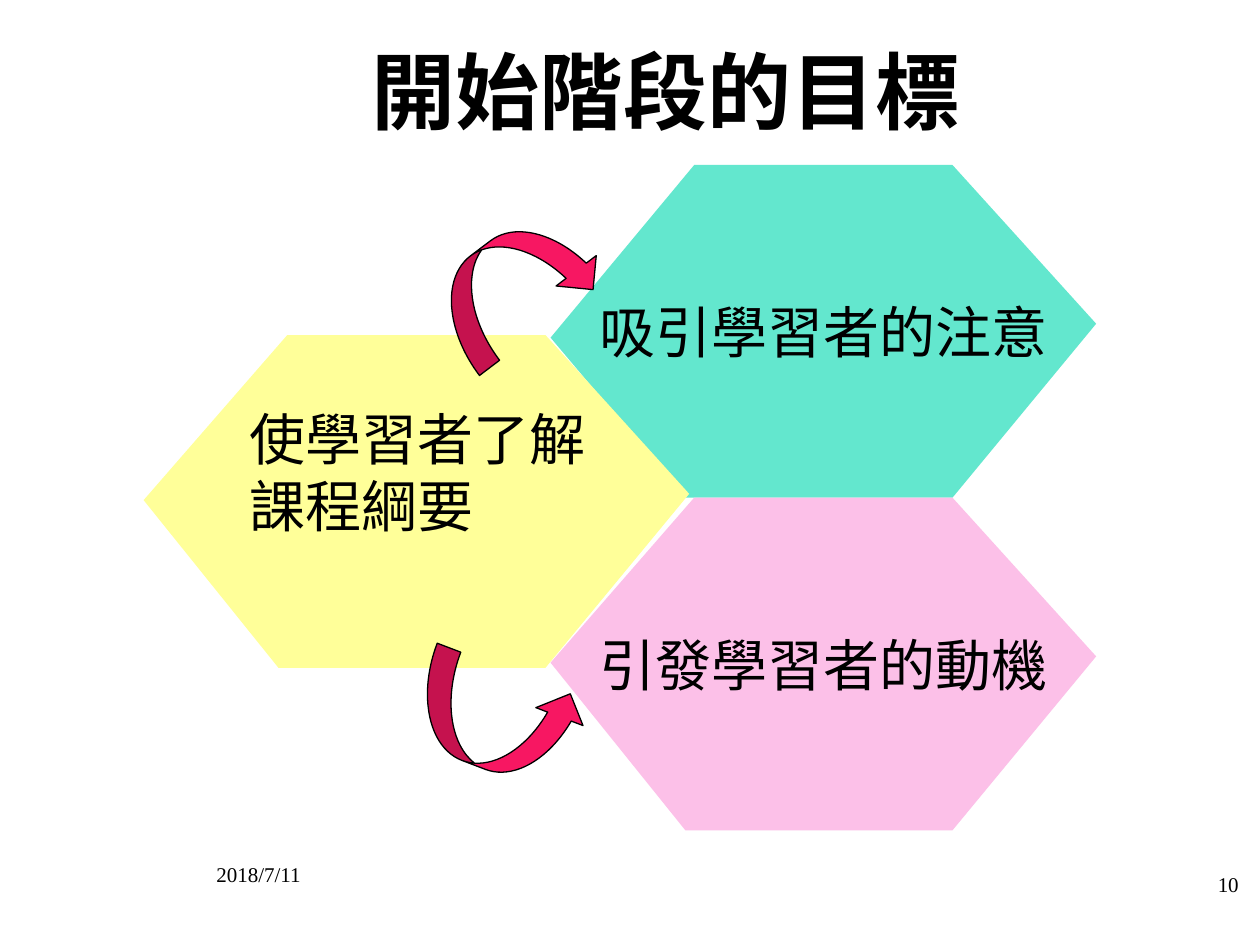
from typing import NamedTuple

from lxml.etree import SubElement
from pptx import Presentation
from pptx.dml.color import RGBColor
from pptx.enum.shapes import MSO_SHAPE
from pptx.enum.text import MSO_ANCHOR, PP_ALIGN
from pptx.oxml.ns import qn
from pptx.util import Inches, Pt

SANS = "Noto Sans CJK SC"
SERIF = "Times New Roman"
INK = "000000"


class Hex(NamedTuple):
    left: float
    top: float
    notch: float
    fill: str
    text: str
    inset: float = 0.39
    base: float = 0.05


class Arrow(NamedTuple):
    kind: MSO_SHAPE
    box: tuple[float, float, float, float]
    turn: float


class Note(NamedTuple):
    left: float
    top: float
    text: str
    align: PP_ALIGN


HEXES = [
    Hex(4.37, 1.31, 1.37, "63E7CE", "吸引學習者的注意"),
    Hex(4.37, 3.95, 1.31, "FCC0E8", "引發學習者的動機"),
    Hex(1.14, 2.66, 1.31, "FFFF99", "使學習者了解\n課程綱要", 0.84, 0.52),
]
ARROWS = [
    Arrow(MSO_SHAPE.CURVED_DOWN_ARROW, (3.43, 1.86, 1.33, 0.8), 322.9),
    Arrow(MSO_SHAPE.CURVED_RIGHT_ARROW, (3.55, 5.05, 0.8, 1.33), 290.8),
]
NOTES = [
    Note(1.62, 6.74, "2018/7/11", PP_ALIGN.LEFT),
    Note(7.6, 6.82, "10", PP_ALIGN.RIGHT),
]


def color(code: str) -> RGBColor:
    return RGBColor.from_string(code)


def paint(shape, code: str) -> None:
    shape.shadow.inherit = False
    shape.fill.solid()
    shape.fill.fore_color.rgb = color(code)


def write(frame, text: str, size: float, face: str, align: PP_ALIGN, bold: bool = False) -> None:
    frame.text = text
    frame.vertical_anchor = MSO_ANCHOR.MIDDLE
    for par in frame.paragraphs:
        par.alignment = align
        for run in par.runs:
            font = run.font
            font.size, font.name, font.bold = Pt(size), face, bold
            font.color.rgb = color(INK)
            SubElement(font._element, qn("a:ea")).set("typeface", face)


def draw_hex(slide, cell: Hex) -> None:
    rim = [(0, cell.notch), (1.14, 0), (3.19, 0), (4.33, 1.26), (3.19, 2.64), (1.07, 2.64)]
    pts = [(Inches(cell.left + x), Inches(cell.top + y)) for x, y in rim]
    form = slide.shapes.build_freeform(*pts[0])
    form.add_line_segments(pts[1:], close=True)
    shape = form.convert_to_shape()
    paint(shape, cell.fill)
    shape.line.fill.background()
    frame = shape.text_frame
    frame.word_wrap = False
    frame.margin_left = Inches(cell.inset)
    frame.margin_right = frame.margin_top = Inches(0.05)
    frame.margin_bottom = Inches(cell.base)
    write(frame, cell.text, 32, SANS, PP_ALIGN.LEFT)


def draw_arrow(slide, arrow: Arrow) -> None:
    shape = slide.shapes.add_shape(arrow.kind, *map(Inches, arrow.box))
    shape.rotation = arrow.turn
    paint(shape, "F71762")
    shape.line.color.rgb = color(INK)
    shape.line.width = Pt(0.75)


def draw_note(slide, note: Note) -> None:
    box = slide.shapes.add_textbox(Inches(note.left), Inches(note.top), Inches(2.33), Inches(0.4))
    box.text_frame.word_wrap = True
    write(box.text_frame, note.text, 12, SERIF, note.align)


def main() -> None:
    deck = Presentation()
    deck.slide_width, deck.slide_height = Inches(10), Inches(7.5)
    slide = deck.slides.add_slide(deck.slide_layouts[5])
    title = slide.shapes.title
    title.left, title.top = Inches(1.06), Inches(0.09)
    title.width, title.height = Inches(8.44), Inches(1.25)
    write(title.text_frame, "開始階段的目標", 48, SANS, PP_ALIGN.CENTER, True)
    for note in NOTES:
        draw_note(slide, note)
    for cell in HEXES:
        draw_hex(slide, cell)
    for arrow in ARROWS:
        draw_arrow(slide, arrow)
    deck.save("out.pptx")


if __name__ == "__main__":
    main()
